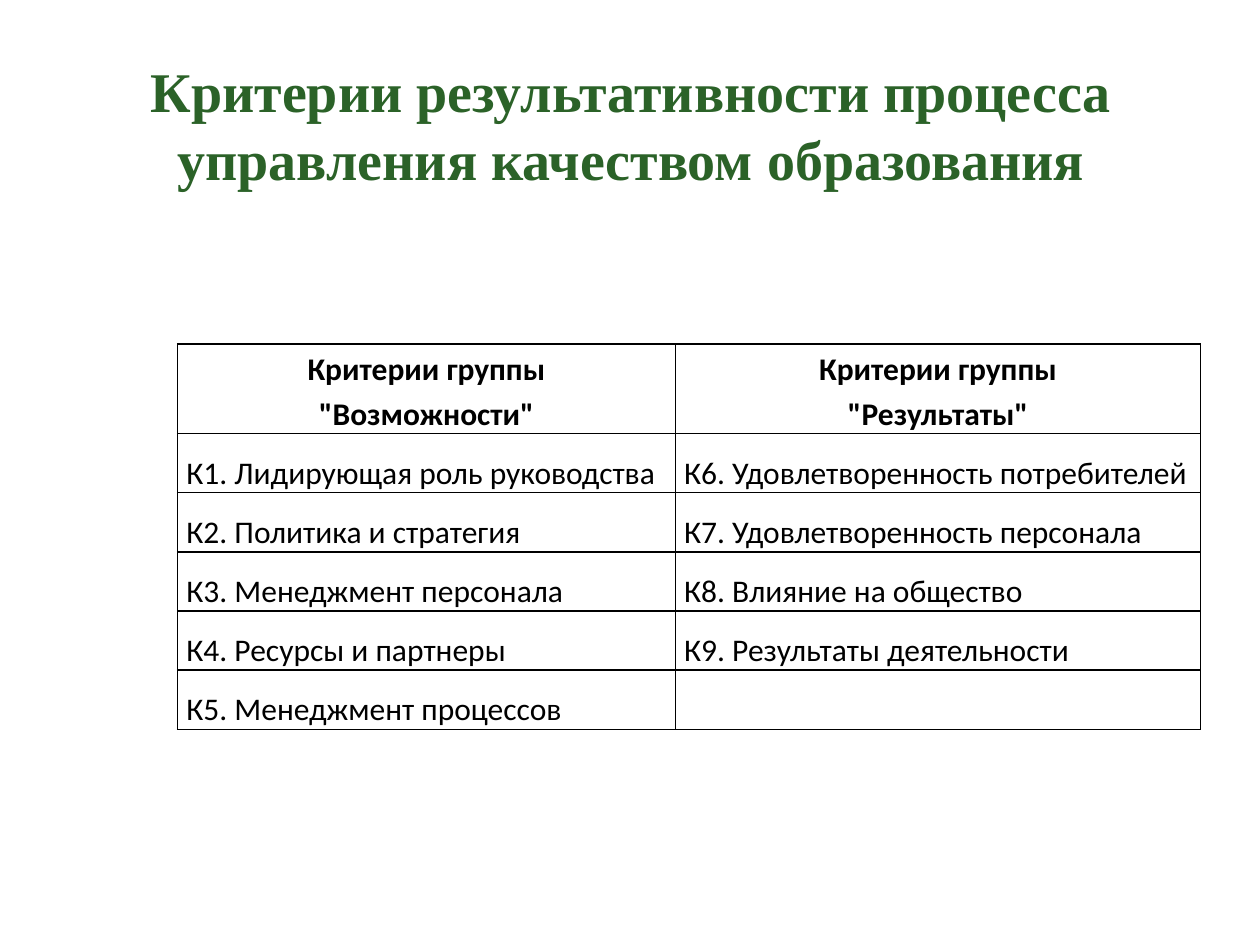
from dataclasses import dataclass

from lxml.etree import SubElement
from pptx import Presentation
from pptx.dml.color import RGBColor
from pptx.enum.text import MSO_ANCHOR, PP_ALIGN
from pptx.oxml.ns import qn
from pptx.util import Inches, Pt


@dataclass(frozen=True)
class Theme:
    title_color: str = "2B6228"
    text_color: str = "000000"
    border_color: str = "000000"
    title_font: str = "Times New Roman"
    body_font: str = "Calibri"
    title_size: int = 32
    body_size: int = 18
    border_width: int = 1


TITLE = "Критерии результативности процесса управления качеством образования"
CRITERIA = [
    ("Критерии группы\n\"Возможности\"", "Критерии группы\n\"Результаты\""),
    ("К1. Лидирующая роль руководства", "К6. Удовлетворенность потребителей"),
    ("К2. Политика и стратегия", "К7. Удовлетворенность персонала"),
    ("К3. Менеджмент персонала", "К8. Влияние на общество"),
    ("К4. Ресурсы и партнеры", "К9. Результаты деятельности"),
    ("К5. Менеджмент процессов", ""),
]
COLUMN_WIDTHS = (3.95, 4.17)
HEADER_HEIGHT, ROW_HEIGHT = 0.71, 0.47


def write_text(frame, text, *, font, size, color, bold=False,
               align=PP_ALIGN.LEFT, line_spacing=1.0):
    """Fill the first paragraph; a newline in the text becomes a line break."""
    paragraph = frame.paragraphs[0]
    paragraph.text = text.replace("\n", "\v")
    paragraph.alignment = align
    paragraph.line_spacing = line_spacing
    for run in paragraph.runs:
        run.font.name = font
        run.font.size = Pt(size)
        run.font.bold = bold
        run.font.color.rgb = RGBColor.from_string(color)


class SlideBuilder:
    def __init__(self, slide, theme):
        self.slide = slide
        self.theme = theme

    def title(self, text, left, top, width, height):
        box = self.slide.shapes.add_textbox(
            Inches(left), Inches(top), Inches(width), Inches(height))
        frame = box.text_frame
        frame.word_wrap = True
        frame.vertical_anchor = MSO_ANCHOR.MIDDLE
        write_text(frame, text, font=self.theme.title_font,
                   size=self.theme.title_size, color=self.theme.title_color,
                   bold=True, align=PP_ALIGN.CENTER)

    def table(self, rows, left, top):
        height = HEADER_HEIGHT + ROW_HEIGHT * (len(rows) - 1)
        table = self.slide.shapes.add_table(
            len(rows), len(COLUMN_WIDTHS), Inches(left), Inches(top),
            Inches(sum(COLUMN_WIDTHS)), Inches(height)).table
        table.first_row = table.horz_banding = False
        for column, width in zip(table.columns, COLUMN_WIDTHS):
            column.width = Inches(width)
        for index, texts in enumerate(rows):
            is_header = index == 0
            table.rows[index].height = Inches(HEADER_HEIGHT if is_header else ROW_HEIGHT)
            for cell, text in zip(table.rows[index].cells, texts):
                self.cell(cell, text, is_header)

    def cell(self, cell, text, is_header):
        cell.margin_left = cell.margin_right = Inches(0.07)
        cell.margin_top, cell.margin_bottom = Inches(0.01), 0
        cell.vertical_anchor = MSO_ANCHOR.MIDDLE
        self.borders(cell)
        cell.fill.background()
        write_text(cell.text_frame, text, font=self.theme.body_font,
                   size=self.theme.body_size, color=self.theme.text_color,
                   bold=is_header,
                   align=PP_ALIGN.CENTER if is_header else PP_ALIGN.LEFT,
                   line_spacing=1.15 if is_header else 1.5)

    def borders(self, cell):
        properties = cell._tc.get_or_add_tcPr()
        for side in ("a:lnL", "a:lnR", "a:lnT", "a:lnB"):
            line = SubElement(properties, qn(side), w=str(Pt(self.theme.border_width)))
            fill = SubElement(line, qn("a:solidFill"))
            SubElement(fill, qn("a:srgbClr"), val=self.theme.border_color)


def main():
    presentation = Presentation()
    presentation.slide_width = Inches(10)
    presentation.slide_height = Inches(7.5)
    slide = presentation.slides.add_slide(presentation.slide_layouts[6])
    builder = SlideBuilder(slide, Theme())
    builder.title(TITLE, 0.91, 0.36, 8.2, 1.25)
    builder.table(CRITERIA, 1.41, 2.73)
    presentation.save("out.pptx")


if __name__ == "__main__":
    main()
